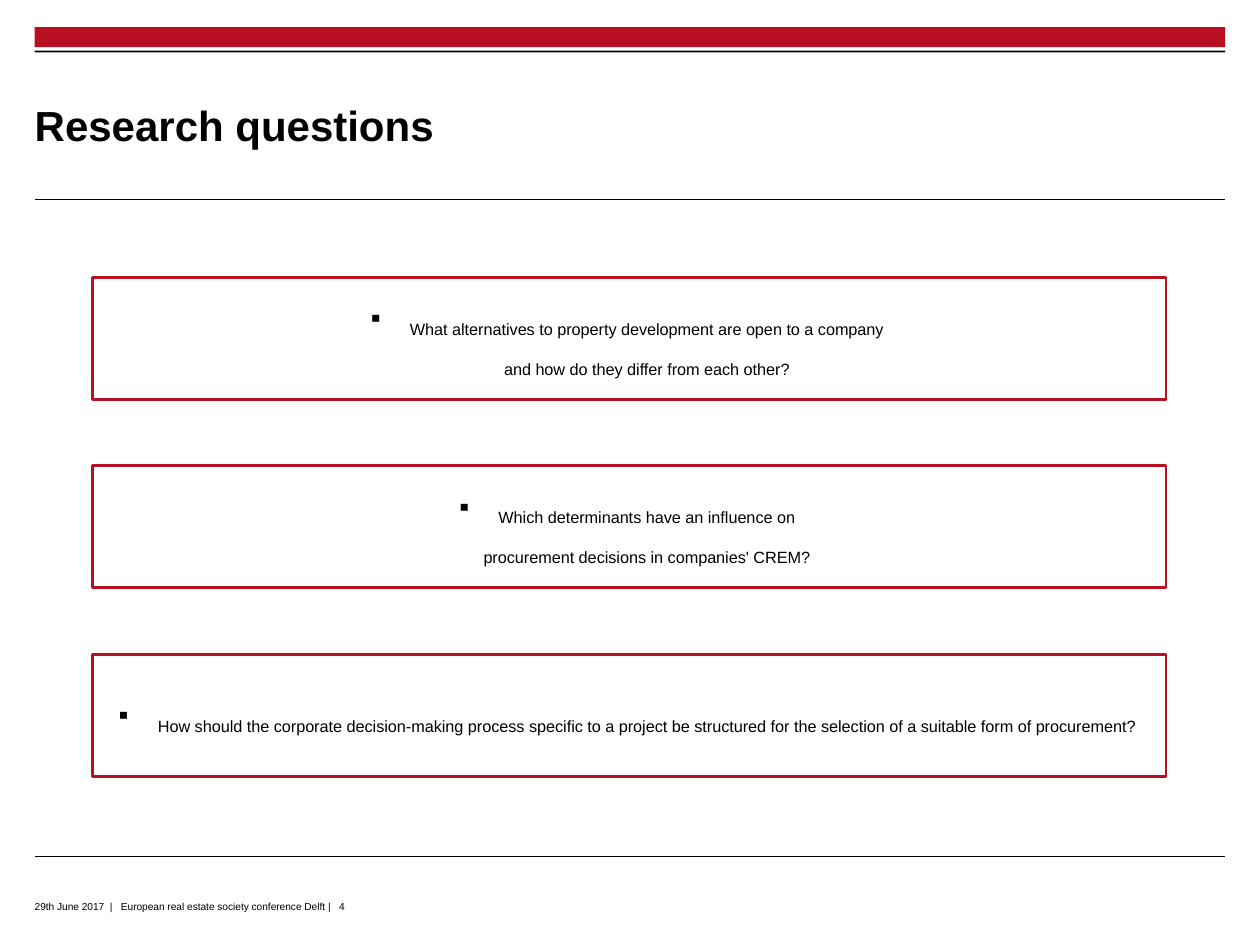
from pptx import Presentation
from pptx.dml.color import RGBColor
from pptx.enum.shapes import MSO_CONNECTOR, MSO_SHAPE
from pptx.enum.text import MSO_ANCHOR, PP_ALIGN
from pptx.oxml.ns import qn
from pptx.util import Cm, Pt
from lxml.etree import SubElement

RED, BLACK, WHITE = "B90F22", "000000", "FFFFFF"
LOWERED = -33000  # baseline shift of the small text, in 1/1000 percent


def color(value):
    return RGBColor.from_string(value)


class SlideWriter:
    font = "Arial"

    def __init__(self, slide):
        self.slide = slide

    def bar(self, left, top, width, height, fill, outline=None):
        bar = self.slide.shapes.add_shape(
            MSO_SHAPE.RECTANGLE, Cm(left), Cm(top), Cm(width), Cm(height))
        bar.shadow.inherit = False
        bar.fill.solid()
        bar.fill.fore_color.rgb = color(fill)
        if outline:
            bar.line.color.rgb = color(outline)
            bar.line.width = Pt(1.5)
        else:
            bar.line.fill.background()
        return bar

    def rule(self, left, top, width):
        rule = self.slide.shapes.add_connector(
            MSO_CONNECTOR.STRAIGHT, Cm(left), Cm(top), Cm(left + width), Cm(top))
        rule.line.color.rgb = color(BLACK)
        rule.line.width = Pt(0.6)
        SubElement(rule._element.spPr, qn("a:effectLst"))

    def run(self, paragraph, text, size, bold=False, baseline=None):
        run = paragraph.add_run()
        run.text = text
        run.font.name = self.font
        run.font.size = Pt(size)
        run.font.bold = bold
        run.font.color.rgb = color(BLACK)
        if baseline:
            run._r.get_or_add_rPr().set("baseline", str(baseline))

    def text(self, left, top, width, height, text, size,
             anchor=MSO_ANCHOR.TOP, **style):
        frame = self.slide.shapes.add_textbox(
            Cm(left), Cm(top), Cm(width), Cm(height)).text_frame
        frame.word_wrap = True
        frame.vertical_anchor = anchor
        frame.margin_left = frame.margin_right = 0
        frame.margin_top = frame.margin_bottom = 0
        self.run(frame.paragraphs[0], text, size, **style)

    def question(self, left, top, width, height, lines):
        frame = self.bar(left, top, width, height, WHITE, RED).text_frame
        frame.word_wrap = True
        frame.vertical_anchor = MSO_ANCHOR.MIDDLE
        paragraph = frame.paragraphs[0]
        paragraph.alignment = PP_ALIGN.CENTER
        properties = paragraph._p.get_or_add_pPr()
        properties.set("marL", str(Cm(0.79)))
        properties.set("indent", str(-Cm(0.79)))
        SubElement(properties, qn("a:buFont"), typeface=self.font)
        SubElement(properties, qn("a:buChar"), char="▪")
        for number, line in enumerate(lines):
            if number:
                paragraph.add_line_break()
            self.run(paragraph, line, 16, baseline=LOWERED)


def main():
    presentation = Presentation()
    presentation.slide_width, presentation.slide_height = Cm(25.4), Cm(19.05)
    writer = SlideWriter(
        presentation.slides.add_slide(presentation.slide_layouts[6]))
    margin, content_width = 0.7, 24

    # Header bars and rules
    writer.bar(margin, 0.55, content_width, 0.4, RED)
    writer.bar(margin, 1.02, content_width, 0.04, BLACK)
    for rule_top in (4.03, 17.27):
        writer.rule(margin, rule_top, content_width)

    # Title
    writer.text(margin, 1.35, 19.1, 2.34, "Research questions", 24,
                MSO_ANCHOR.MIDDLE, bold=True)

    # Research questions, evenly spaced
    questions = [
        ["What alternatives to property development are open to a company ",
         "and how do they differ from each other? "],
        ["Which determinants have an influence on ",
         "procurement decisions in companies' CREM? "],
        ["How should the corporate decision-making process specific to a "
         "project be structured for the selection of a suitable form of "
         "procurement? "],
    ]
    for number, lines in enumerate(questions):
        writer.question(1.87, 5.59 + number * 3.8, 21.64, 2.46, lines)

    # Footer
    writer.text(margin, 17.88, 23.7, 0.64,
                "29th June 2017  |   European real estate society conference Delft |   4",
                10, baseline=LOWERED)

    presentation.save("out.pptx")


if __name__ == "__main__":
    main()
